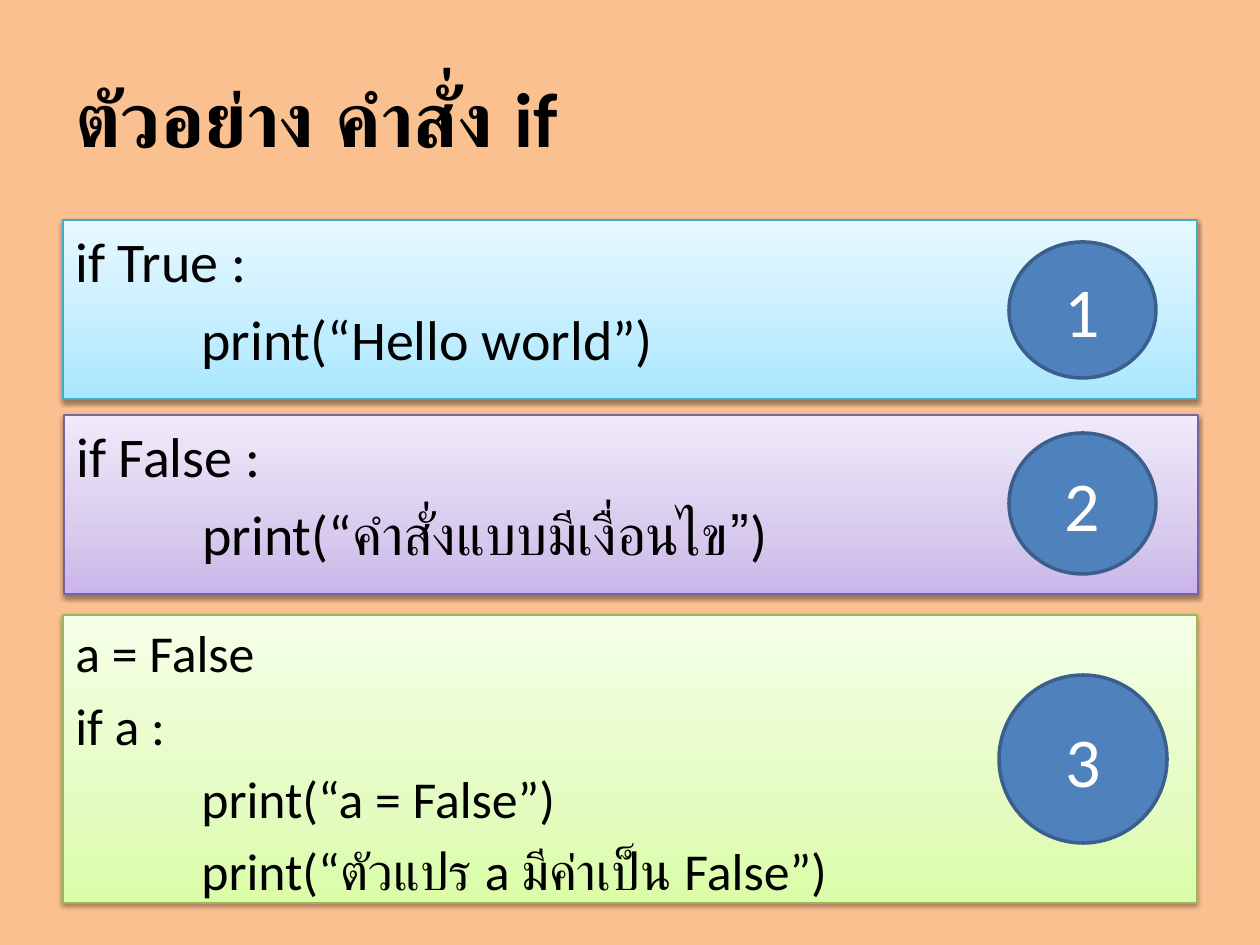
from copy import deepcopy

from lxml.etree import SubElement
from pptx import Presentation
from pptx.dml.color import RGBColor
from pptx.enum.shapes import MSO_SHAPE
from pptx.enum.text import MSO_ANCHOR, PP_ALIGN
from pptx.oxml.ns import qn
from pptx.util import Pt

PX = 914400 / 126
CODE_TAB = 126
BLACK, WHITE = "000000", "FFFFFF"
BACKGROUND = "FAC090"
BADGE_FILL, BADGE_LINE = "4F81BD", "3A5F8C"

PANELS = [
    {
        "box": (63, 220, 1134, 179), "line": "46AAC5", "size": 32,
        "colors": ("A7E6FF", "C1EDFF", "E7F8FF"),
        "code": ["if True :", "\tprint(“Hello world”)"],
        "number": "1", "badge": (946, 22, 147, 136),
    },
    {
        "box": (64, 415, 1134, 179), "line": "7D60A0", "size": 32,
        "colors": ("C9B5E8", "D8CBEE", "F0EAF9"),
        "code": ["if False :", "\tprint(“คำสั่งแบบมีเงื่อนไข”)"],
        "number": "2", "badge": (945, 18, 147, 141),
    },
    {
        "box": (63, 615, 1134, 288), "line": "98B955", "size": 29.6,
        "colors": ("DAFDA7", "E4FCC2", "F5FFE7"),
        "code": ["a = False", "if a :", "\tprint(“a = False”)",
                 "\tprint(“ตัวแปร a มีค่าเป็น False”)"],
        "number": "3", "badge": (936, 60, 168, 168),
    },
]


def px(*lengths):
    return [round(length * PX) for length in lengths]


def color(value):
    return RGBColor.from_string(value)


def apply(target, values):
    for name, value in values.items():
        setattr(target, name, value)


def write(shape, lines, size, font_color, anchor, align=PP_ALIGN.LEFT, bold=False):
    frame = shape.text_frame
    apply(frame, {"word_wrap": True, "vertical_anchor": anchor})
    for index, line in enumerate(lines):
        paragraph = frame.add_paragraph() if index else frame.paragraphs[0]
        paragraph.alignment = align
        run = paragraph.add_run()
        run.text = line
        apply(run.font, {"name": "Calibri", "size": Pt(size), "bold": bold})
        run.font.color.rgb = color(font_color)


def add_outlined(slide, kind, box, line_color, line_width):
    shape = slide.shapes.add_shape(kind, *px(*box))
    shape.shadow.inherit = False
    shape.line.color.rgb = color(line_color)
    shape.line.width = Pt(line_width)
    return shape


def fill_gradient(shape, colors):
    shape.fill.gradient()
    shape.fill.gradient_angle = 90
    stop_list = shape._element.spPr.find(".//" + qn("a:gsLst"))
    stop_list.append(deepcopy(stop_list[0]))
    for stop, position, value in zip(shape.fill.gradient_stops, (0, 0.35, 1), colors):
        stop.position = position
        stop.color.rgb = color(value)


def add_shadow(shape):
    effects = shape._element.spPr.find(qn("a:effectLst"))
    shadow = SubElement(effects, qn("a:outerShdw"), blurRad=str(Pt(3.1)),
                        dist=str(Pt(1.6)), dir="5400000", rotWithShape="0")
    shade = SubElement(shadow, qn("a:srgbClr"), val=BLACK)
    SubElement(shade, qn("a:alpha"), val="38000")


def format_code(shape, percent):
    for paragraph in shape.text_frame.paragraphs:
        paragraph.space_before = Pt(0)
        properties = paragraph._p.pPr
        spacing = properties.find(qn("a:spcBef"))
        spacing.remove(spacing[0])
        SubElement(spacing, qn("a:spcPct"), val=str(percent * 1000))
        tabs = SubElement(properties, qn("a:tabLst"))
        SubElement(tabs, qn("a:tab"), pos=str(px(CODE_TAB)[0]), algn="l")


def add_title(slide, box, text):
    title = slide.shapes.add_textbox(*px(*box))
    write(title, [text], 44, BLACK, MSO_ANCHOR.MIDDLE, bold=True)


def add_badge(slide, box, number):
    badge = add_outlined(slide, MSO_SHAPE.OVAL, box, BADGE_LINE, 2)
    badge.fill.solid()
    badge.fill.fore_color.rgb = color(BADGE_FILL)
    write(badge, [number], 40, WHITE, MSO_ANCHOR.MIDDLE, PP_ALIGN.CENTER)


def add_panel(slide, panel):
    left, top, _, _ = panel["box"]
    shape = add_outlined(slide, MSO_SHAPE.RECTANGLE, panel["box"], panel["line"], 0.75)
    fill_gradient(shape, panel["colors"])
    add_shadow(shape)
    write(shape, panel["code"], panel["size"], BLACK, MSO_ANCHOR.TOP)
    format_code(shape, 20)
    x, y, width, height = panel["badge"]
    add_badge(slide, (left + x, top + y, width, height), panel["number"])


def main():
    presentation = Presentation()
    width, height = px(1260, 945)
    apply(presentation, {"slide_width": width, "slide_height": height})
    slide = presentation.slides.add_slide(presentation.slide_layouts[6])
    slide.background.fill.solid()
    slide.background.fill.fore_color.rgb = color(BACKGROUND)
    add_title(slide, (63, 38, 1134, 157), "ตัวอย่าง คำสั่ง if")
    for panel in PANELS:
        add_panel(slide, panel)
    presentation.save("out.pptx")


if __name__ == "__main__":
    main()
